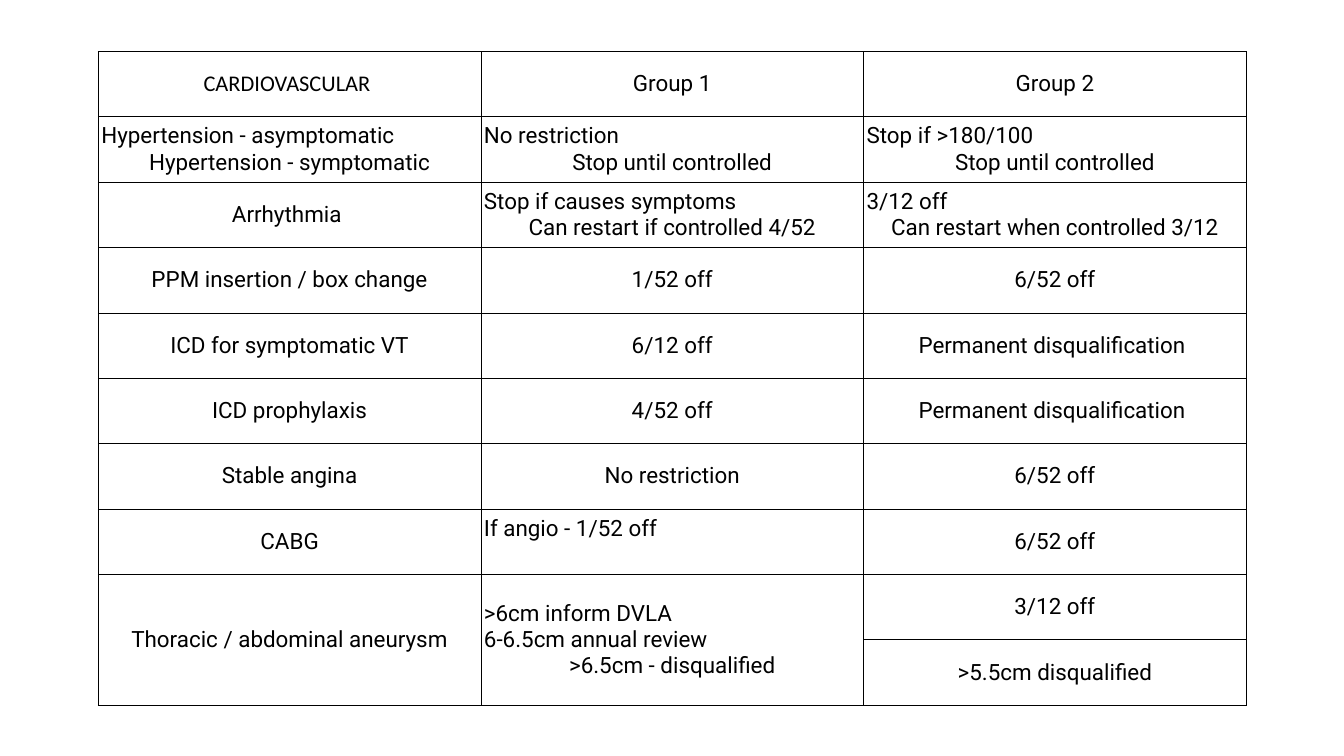
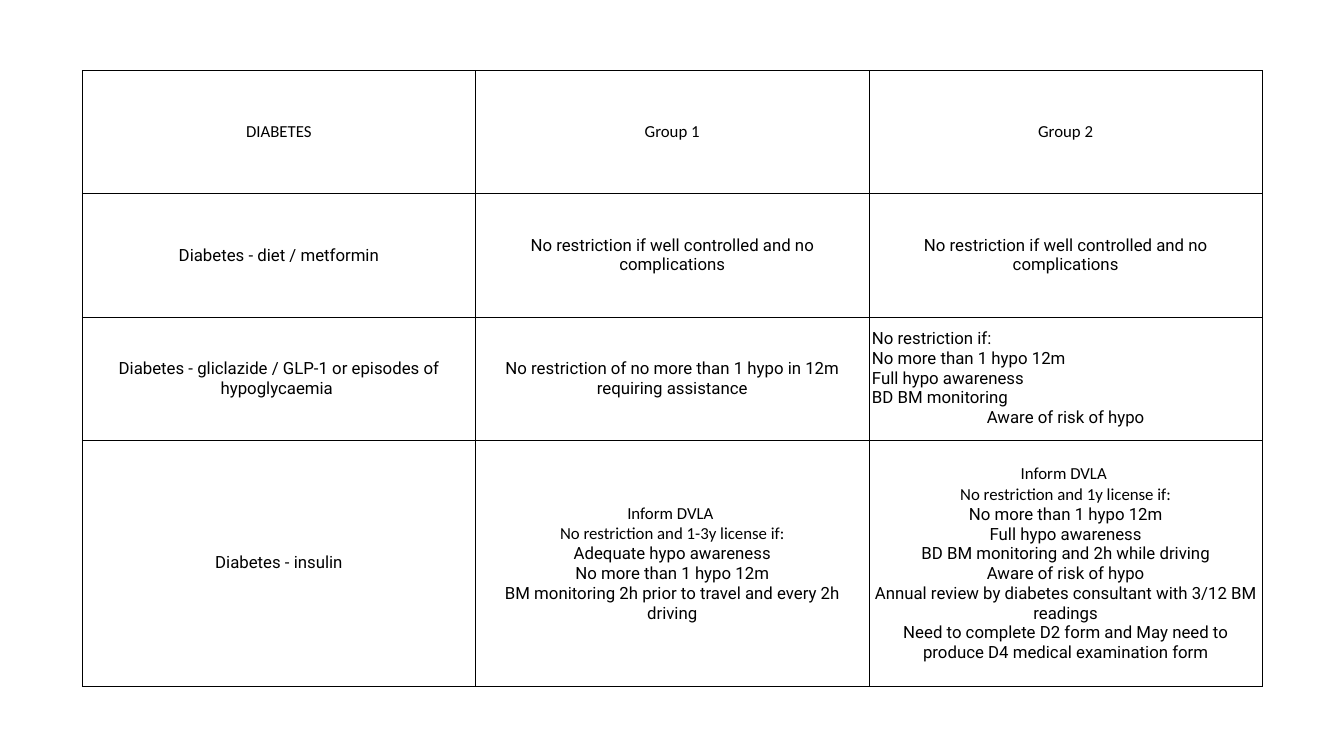
from dataclasses import dataclass

import lxml.etree
import pptx
import pptx.dml.color
import pptx.enum.text
import pptx.oxml.ns
import pptx.presentation
import pptx.table
import pptx.text.text
import pptx.util

EMU_PER_PX = 9144
PAGE_WIDTH, PAGE_HEIGHT = 2667, 1500
BLANK_LAYOUT = 6


@dataclass(frozen=True)
class Theme:
    ink: str = "000000"
    heading_font: str = "Calibri"
    body_font: str = "Roboto"
    large_size: int = 32
    medium_size: int = 24
    border_width: int = 1
    cell_margin: int = 6


@dataclass(frozen=True)
class Entry:
    lines: tuple[str, ...]
    heading_lines: int = 0
    left_lines: int = 0
    row_span: int = 1
    space_below: int = 0


@dataclass(frozen=True)
class Guidance:
    left: int
    top: int
    width: int
    height: int
    text_size: int
    row_count: int
    rows: tuple[tuple[Entry, ...], ...]


THEME = Theme()
CENTER = pptx.enum.text.PP_ALIGN.CENTER
LEFT = pptx.enum.text.PP_ALIGN.LEFT


def px(length: float) -> pptx.util.Emu:
    return pptx.util.Emu(round(length * EMU_PER_PX))


def plain(*lines: str, row_span: int = 1) -> Entry:
    return Entry(lines, row_span=row_span)


def heading(text: str) -> Entry:
    return Entry((text,), heading_lines=1)


def stepped(*lines: str, row_span: int = 1) -> Entry:
    return Entry(lines, left_lines=len(lines) - 1, row_span=row_span)


def licence(*lines: str) -> Entry:
    return Entry(lines, heading_lines=2, row_span=2)


CARDIOVASCULAR = Guidance(
    left=195, top=102, width=2278, height=1297,
    text_size=THEME.large_size, row_count=10,
    rows=(
        (heading("CARDIOVASCULAR "), plain("Group 1"), plain("Group 2")),
        (
            stepped("Hypertension - asymptomatic", "Hypertension - symptomatic"),
            stepped("No restriction", "Stop until controlled"),
            stepped("Stop if >180/100", "Stop until controlled"),
        ),
        (
            plain("Arrhythmia "),
            stepped("Stop if causes symptoms", "Can restart if controlled 4/52"),
            stepped("3/12 off", "Can restart when controlled 3/12"),
        ),
        (plain("PPM insertion / box change"), plain("1/52 off"), plain("6/52 off")),
        (plain("ICD for symptomatic VT"), plain("6/12 off"),
         plain("Permanent disqualification ")),
        (plain("ICD prophylaxis"), plain("4/52 off"),
         plain("Permanent disqualification ")),
        (plain("Stable angina"), plain("No restriction"), plain("6/52 off")),
        (
            plain("CABG"),
            Entry(("If angio - 1/52 off",), left_lines=1, space_below=52),
            plain("6/52 off"),
        ),
        (
            plain("Thoracic / abdominal aneurysm", row_span=2),
            stepped(">6cm inform DVLA", "6-6.5cm annual review",
                    ">6.5cm - disqualified", row_span=2),
            plain("3/12 off"),
        ),
        (plain(), plain(), plain(">5.5cm disqualified")),
    ),
)

WELL_CONTROLLED = plain("No restriction if well controlled and no complications")

DIABETES = Guidance(
    left=163, top=140, width=2342, height=1222,
    text_size=THEME.medium_size, row_count=5,
    rows=(
        (heading("DIABETES"), heading("Group 1"), heading("Group 2")),
        (plain("Diabetes - diet / metformin"), WELL_CONTROLLED, WELL_CONTROLLED),
        (
            plain("Diabetes - gliclazide / GLP-1 or episodes of hypoglycaemia "),
            plain("No restriction of no more than 1 hypo in 12m requiring assistance"),
            stepped("No restriction if:", "No more than 1 hypo 12m",
                    "Full hypo awareness", "BD BM monitoring",
                    "Aware of risk of hypo"),
        ),
        (
            plain("Diabetes - insulin", row_span=2),
            licence(
                "Inform DVLA ",
                "No restriction and 1-3y license if:",
                "Adequate hypo awareness",
                "No more than 1 hypo 12m",
                "BM monitoring 2h prior to travel and every 2h driving",
            ),
            licence(
                "Inform DVLA ",
                "No restriction and 1y license if:",
                "No more than 1 hypo 12m",
                "Full hypo awareness",
                "BD BM monitoring and 2h while driving",
                "Aware of risk of hypo",
                "Annual review by diabetes consultant with 3/12 BM readings",
                "Need to complete D2 form and May need to produce D4 medical "
                "examination form",
            ),
        ),
    ),
)


def write_line(para: pptx.text.text._Paragraph, text: str, *, font: str,
               size: int, align: pptx.enum.text.PP_ALIGN) -> None:
    para.alignment = align
    span = para.add_run()
    span.text = text
    span.font.name = font
    span.font.size = pptx.util.Pt(size)
    span.font.bold = False
    span.font.color.rgb = pptx.dml.color.RGBColor.from_string(THEME.ink)


def style_cell(cell: pptx.table._Cell) -> None:
    qualified = pptx.oxml.ns.qn
    properties = cell._tc.get_or_add_tcPr()
    for side in ("lnL", "lnR", "lnT", "lnB"):
        line = lxml.etree.SubElement(properties, qualified(f"a:{side}"))
        line.set("w", str(pptx.util.Pt(THEME.border_width)))
        fill = lxml.etree.SubElement(line, qualified("a:solidFill"))
        lxml.etree.SubElement(fill, qualified("a:srgbClr")).set("val", THEME.ink)
    cell.fill.background()
    cell.vertical_anchor = pptx.enum.text.MSO_ANCHOR.MIDDLE
    margin = px(THEME.cell_margin)
    cell.margin_left = cell.margin_right = margin
    cell.margin_top = cell.margin_bottom = margin


def fill_cell(cell: pptx.table._Cell, entry: Entry, size: int) -> None:
    cell.margin_bottom = px(THEME.cell_margin + entry.space_below)
    frame = cell.text_frame
    for index, text in enumerate(entry.lines):
        para = frame.add_paragraph() if index else frame.paragraphs[0]
        is_heading = index < entry.heading_lines
        write_line(
            para, text, size=size,
            font=THEME.heading_font if is_heading else THEME.body_font,
            align=LEFT if index < entry.left_lines else CENTER,
        )


def add_guidance(deck: pptx.presentation.Presentation, guidance: Guidance) -> None:
    page = deck.slides.add_slide(deck.slide_layouts[BLANK_LAYOUT])
    column_count = len(guidance.rows[0])
    table = page.shapes.add_table(
        guidance.row_count, column_count, px(guidance.left), px(guidance.top),
        px(guidance.width), px(guidance.height),
    ).table
    table.first_row = False
    table.horz_banding = False
    for column in table.columns:
        column.width = px(guidance.width / column_count)
    for row in table.rows:
        row.height = px(guidance.height / guidance.row_count)
    for cell in table.iter_cells():
        style_cell(cell)
    for row_index, entries in enumerate(guidance.rows):
        for column_index, entry in enumerate(entries):
            cell = table.cell(row_index, column_index)
            if entry.row_span > 1:
                last_row = row_index + entry.row_span - 1
                cell.merge(table.cell(last_row, column_index))
            fill_cell(cell, entry, guidance.text_size)


def main() -> None:
    deck = pptx.Presentation()
    deck.slide_width = px(PAGE_WIDTH)
    deck.slide_height = px(PAGE_HEIGHT)
    for guidance in (CARDIOVASCULAR, DIABETES):
        add_guidance(deck, guidance)
    deck.save("out.pptx")


if __name__ == "__main__":
    main()
